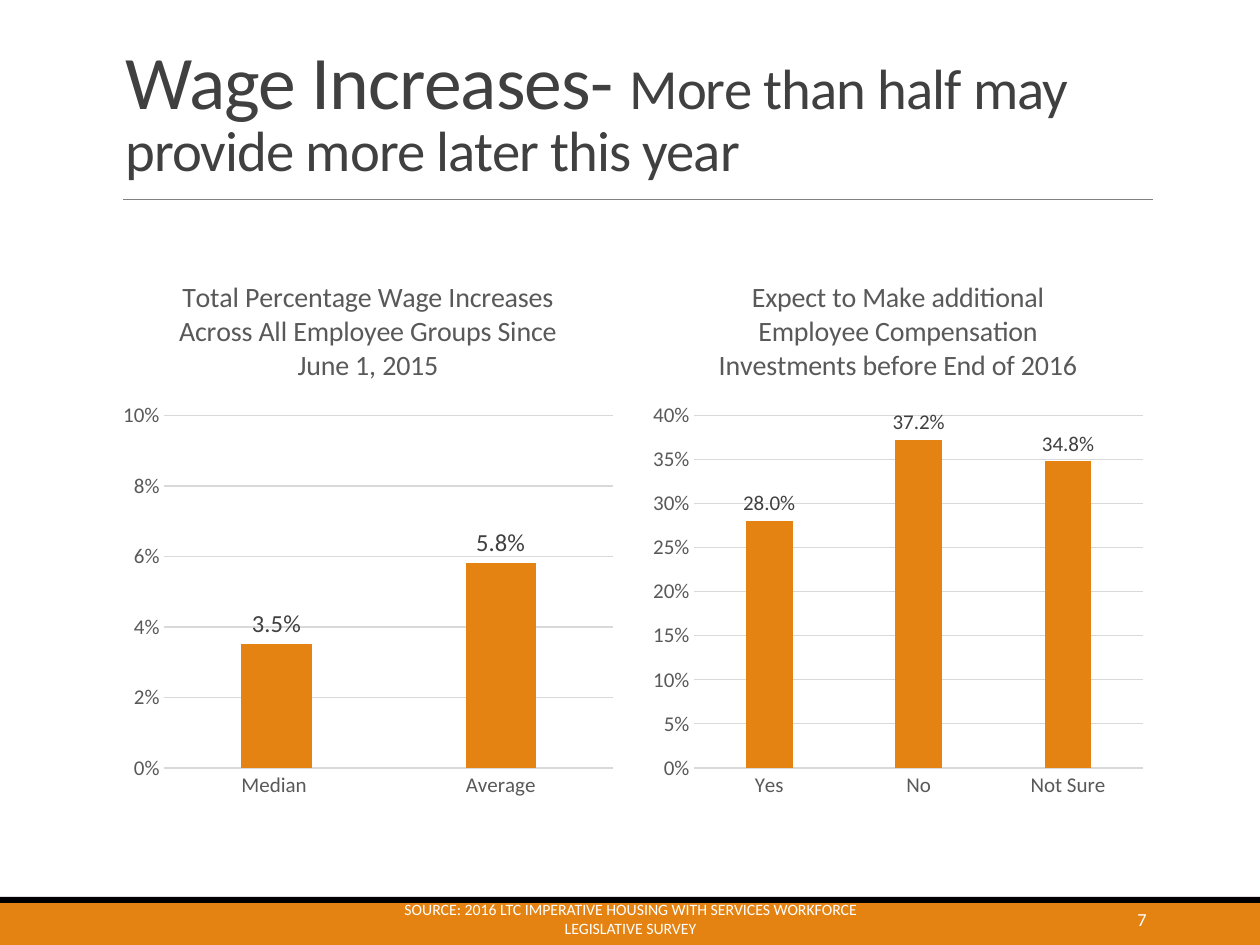
"""Build the wage increases slide with two column charts."""
import pptx
import pptx.chart.data
import pptx.dml.color
import pptx.enum.chart
import pptx.enum.shapes
import pptx.enum.text
import pptx.oxml
import pptx.util
from dataclasses import dataclass


@dataclass(frozen=True)
class Theme:
    font: str = "Calibri"
    orange: str = "E48312"
    black: str = "000000"
    white: str = "FFFFFF"
    rule: str = "808080"
    dark: str = "404040"
    grey: str = "595959"
    grid: str = "D9D9D9"
    title_size: float = 43.2
    subtitle_size: float = 32.4
    chart_title_size: float = 16
    axis_size: float = 12
    chart_size: float = 10
    number_size: float = 10.5
    source_size: float = 9


def px(*values):
    return [round(value * 914400 / 126) for value in values]


def style(font, size, color):
    font.name = theme.font
    font.size = pptx.util.Pt(size)
    font.bold = False
    font.color.rgb = pptx.dml.color.RGBColor.from_string(color)


theme = Theme()
rgb = pptx.dml.color.RGBColor.from_string
align = pptx.enum.text.PP_ALIGN
anchor = pptx.enum.text.MSO_ANCHOR

presentation = pptx.Presentation()
presentation.slide_width, presentation.slide_height = px(1260, 945)
slide = presentation.slides.add_slide(presentation.slide_layouts[6])

for top, height, color in ((898, 47, theme.orange), (897, 6, theme.black)):
    band = slide.shapes.add_shape(
        pptx.enum.shapes.MSO_SHAPE.RECTANGLE, *px(0, top, 1260, height))
    band.shadow.inherit = False
    band.fill.solid()
    band.fill.fore_color.rgb = rgb(color)
    band.line.fill.background()

title_rule = slide.shapes.add_connector(
    pptx.enum.shapes.MSO_CONNECTOR.STRAIGHT, *px(123, 199, 1153, 199))
title_rule.line.color.rgb = rgb(theme.rule)
title_rule.line.width = pptx.util.Pt(0.5)
title_rule._element.spPr.append(pptx.oxml.parse_xml(
    '<a:effectLst xmlns:a="http://schemas.openxmlformats.org/drawingml/2006/main"/>'))

texts = (
    ((113, 39, 1040, 150), anchor.BOTTOM, align.LEFT, 0.85, -50, theme.dark,
     (("Wage Increases- ", theme.title_size),
      ("More than half may provide more later this year", theme.subtitle_size))),
    ((1023, 898, 136, 42), anchor.MIDDLE, align.RIGHT, 1.0, 0, theme.white,
     (("7", theme.number_size),)),
    ((381, 898, 499, 42), anchor.MIDDLE, align.CENTER, 1.0, 0, theme.white,
     (("SOURCE: 2016 LTC IMPERATIVE HOUSING WITH SERVICES WORKFORCE LEGISLATIVE SURVEY",
       theme.source_size),)),
)
for bounds, vertical, horizontal, line_spacing, tracking, color, runs in texts:
    text_frame = slide.shapes.add_textbox(*px(*bounds)).text_frame
    text_frame.word_wrap = True
    text_frame.vertical_anchor = vertical
    paragraph = text_frame.paragraphs[0]
    paragraph.alignment = horizontal
    paragraph.line_spacing = line_spacing
    for text, size in runs:
        run = paragraph.add_run()
        run.text = text
        style(run.font, size, color)
        run.font._element.set("spc", str(tracking))

wage_title = "Total Percentage Wage Increases Across All Employee Groups Since June 1, 2015"
charts = (
    (113, wage_title, wage_title, ("Median ", "Average"), (0.035, 0.058), 0.1, 0.02, 14),
    (643, "Expect to Make additional Employee Compensation Investments before End of 2016",
     "Series 1", ("Yes", "No", "Not Sure"), (0.28, 0.372, 0.348), 0.4, 0.05, 12),
)
for left, title, series_name, categories, values, maximum, step, label_size in charts:
    data = pptx.chart.data.CategoryChartData(number_format="0.0%")
    data.categories = categories
    data.add_series(series_name, values)
    chart = slide.shapes.add_chart(
        pptx.enum.chart.XL_CHART_TYPE.COLUMN_CLUSTERED, *px(left, 255, 510, 554), data).chart
    style(chart.font, theme.chart_size, theme.black)
    chart.has_legend = False
    chart.has_title = True
    chart.chart_title.include_in_layout = False
    chart.chart_title.text_frame.text = title
    style(chart.chart_title.text_frame.paragraphs[0].runs[0].font,
          theme.chart_title_size, theme.grey)

    for axis in (chart.category_axis, chart.value_axis):
        axis.major_tick_mark = pptx.enum.chart.XL_TICK_MARK.NONE
        axis.minor_tick_mark = pptx.enum.chart.XL_TICK_MARK.NONE
        style(axis.tick_labels.font, theme.axis_size, theme.grey)
    value_axis = chart.value_axis
    value_axis.minimum_scale = 0
    value_axis.maximum_scale = maximum
    value_axis.major_unit = step
    value_axis.tick_labels.number_format = "0%"
    value_axis.tick_labels.number_format_is_linked = False
    value_axis.format.line.fill.background()
    for line in (chart.category_axis.format.line, value_axis.major_gridlines.format.line):
        line.color.rgb = rgb(theme.grid)
        line.width = pptx.util.Pt(0.75)

    plot = chart.plots[0]
    plot.gap_width = 219
    plot.overlap = -27
    plot.vary_by_categories = False
    series = plot.series[0]
    series.format.fill.solid()
    series.format.fill.fore_color.rgb = rgb(theme.orange)
    labels = series.data_labels
    labels.show_value = True
    labels.number_format = "0.0%"
    labels.number_format_is_linked = False
    labels.position = pptx.enum.chart.XL_LABEL_POSITION.OUTSIDE_END
    style(labels.font, label_size, theme.dark)

presentation.save("out.pptx")
